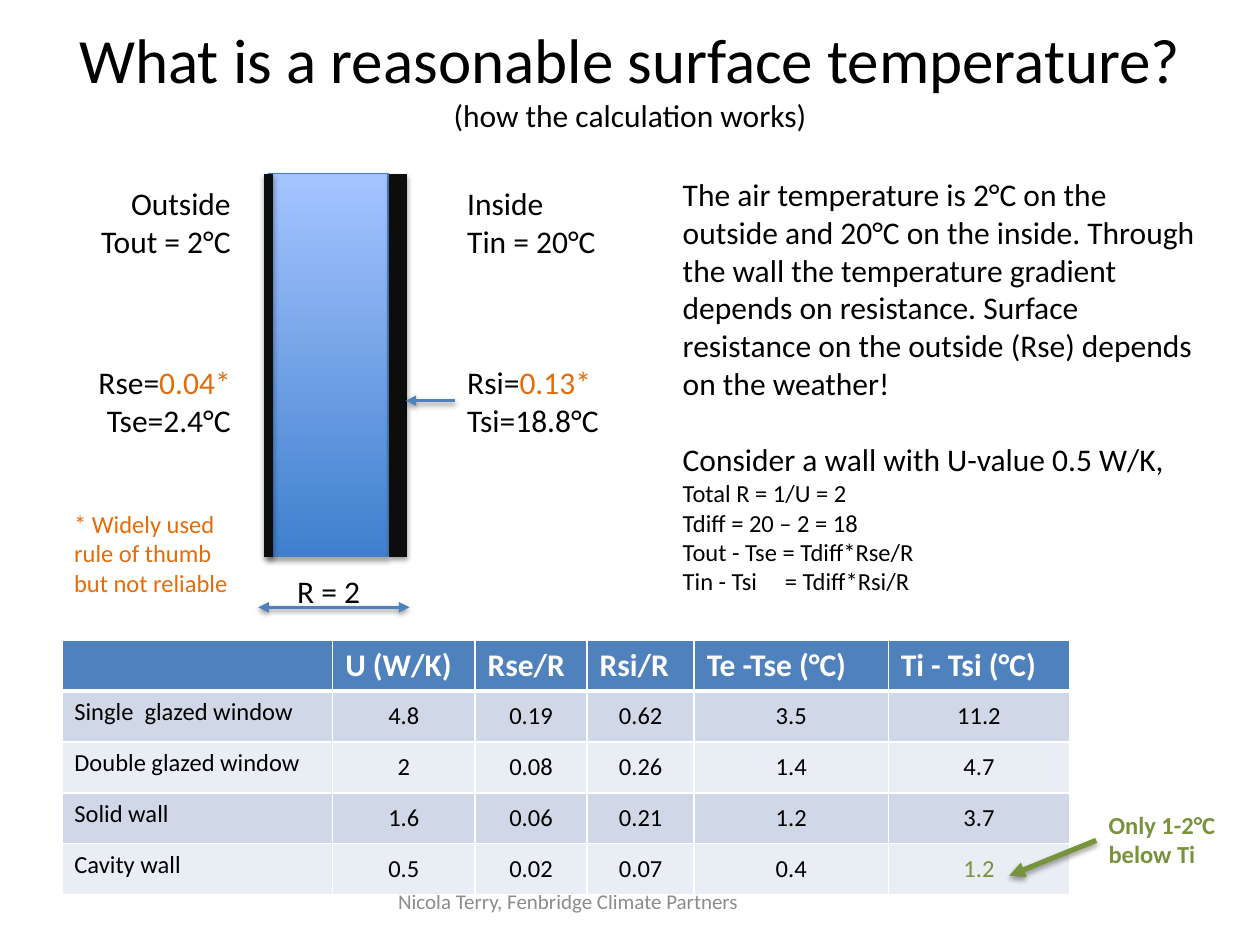
from dataclasses import dataclass

from lxml import etree
from pptx import Presentation
from pptx.dml.color import RGBColor
from pptx.enum.shapes import MSO_CONNECTOR, MSO_SHAPE
from pptx.enum.text import MSO_ANCHOR, MSO_AUTO_SIZE, PP_ALIGN
from pptx.oxml.ns import qn
from pptx.util import Inches, Pt

LEFT, CENTER, RIGHT = PP_ALIGN.LEFT, PP_ALIGN.CENTER, PP_ALIGN.RIGHT
TOP, MIDDLE = MSO_ANCHOR.TOP, MSO_ANCHOR.MIDDLE
FONT = "Calibri"
COLORS = {
    "black": "000000", "white": "FFFFFF", "gray": "8C8C8C", "surface": "0D0D0D",
    "orange": "E46C0A", "green": "77933C", "blue": "4F81BD", "outline": "4B7EBC",
    "wall_dark": "3F80CE", "wall_light": "A4C4FF",
    "band_dark": "D0D8E8", "band_light": "E9EDF4",
}


@dataclass
class Run:
    text: str
    size: float = 18
    color: str = "black"
    bold: bool = False


@dataclass
class Label:
    box: tuple
    paragraphs: list
    align: PP_ALIGN = LEFT
    anchor: MSO_ANCHOR = TOP


@dataclass
class Line:
    start: tuple
    end: tuple
    color: str
    width: float
    arrows: tuple = ()


def rgb(name: str) -> RGBColor:
    return RGBColor.from_string(COLORS[name])


def add_run(p, run: Run) -> None:
    r = p.add_run()
    r.text = run.text
    r.font.name, r.font.size, r.font.bold = FONT, Pt(run.size), run.bold
    r.font.color.rgb = rgb(run.color)


def fill_text(tf, paragraphs: list, align: PP_ALIGN) -> None:
    for i, runs in enumerate(paragraphs):
        p = tf.paragraphs[0] if i == 0 else tf.add_paragraph()
        p.alignment = align
        for run in runs:
            if run is None:
                p.add_line_break()
            else:
                add_run(p, run)


def add_label(s, label: Label):
    sp = s.shapes.add_textbox(*map(Inches, label.box))
    tf = sp.text_frame
    tf.word_wrap = True
    tf.auto_size = MSO_AUTO_SIZE.NONE if label.anchor == MIDDLE else MSO_AUTO_SIZE.SHAPE_TO_FIT_TEXT
    tf.vertical_anchor = label.anchor
    fill_text(tf, label.paragraphs, label.align)
    return tf


def add_shadow(sp, alpha: int, distance: float) -> None:
    effects = etree.SubElement(sp._element.spPr, qn("a:effectLst"))
    shadow = etree.SubElement(effects, qn("a:outerShdw"), blurRad=str(Pt(3.1)),
                              dist=str(Pt(distance)), dir="5400000", rotWithShape="0")
    color = etree.SubElement(shadow, qn("a:srgbClr"), val=COLORS["black"])
    etree.SubElement(color, qn("a:alpha"), val=str(alpha * 1000))


def add_line(s, line: Line) -> None:
    sp = s.shapes.add_connector(MSO_CONNECTOR.STRAIGHT, *map(Inches, line.start + line.end))
    sp.line.color.rgb = rgb(line.color)
    sp.line.width = Pt(line.width)
    for end in line.arrows:
        etree.SubElement(sp.line._get_or_add_ln(), qn(f"a:{end}"), type="triangle")
    add_shadow(sp, 38, 1.6)


def add_wall(s) -> None:
    sp = s.shapes.add_shape(MSO_SHAPE.RECTANGLE, *map(Inches, (2.13, 1.38, 0.95, 3.04)))
    sp.fill.gradient()
    sp.fill.gradient_angle = 90
    for stop, position, color in zip(sp.fill.gradient_stops, (0, 1), ("wall_dark", "wall_light")):
        stop.position = position
        stop.color.rgb = rgb(color)
    sp.line.color.rgb = rgb("outline")
    sp.line.width = Pt(0.75)
    add_shadow(sp, 35, 1.8)


def set_borders(cell, bottom: float) -> None:
    tc_pr = cell._tc.get_or_add_tcPr()
    for i, (side, width) in enumerate(zip("LRTB", (1, 1, 1, bottom))):
        ln = etree.Element(qn(f"a:ln{side}"), w=str(Pt(width)))
        solid = etree.SubElement(ln, qn("a:solidFill"))
        etree.SubElement(solid, qn("a:srgbClr"), val=COLORS["white"])
        tc_pr.insert(i, ln)


def add_results(s, rows: list, widths: list) -> None:
    row_height = Inches(2.02 / len(rows))
    frame = s.shapes.add_table(len(rows), len(widths), Inches(0.49), Inches(5.08),
                               Inches(sum(widths)), row_height * len(rows))
    table = frame.table
    for col, width in zip(table.columns, widths):
        col.width = Inches(width)
    for r, values in enumerate(rows):
        table.rows[r].height = row_height
        header = r == 0
        for c, value in enumerate(values):
            cell = table.cell(r, c)
            cell.fill.solid()
            cell.fill.fore_color.rgb = rgb("blue" if header else ("band_light", "band_dark")[r % 2])
            set_borders(cell, 3 if header else 1)
            numeric = not header and c > 0
            if numeric:
                cell.vertical_anchor = MIDDLE
                cell.margin_left = cell.margin_right = cell.margin_top = cell.margin_bottom = 0
            last = r == len(rows) - 1 and c == len(values) - 1
            run = Run(value, 18, "white", True) if header else Run(value, 14, "green" if last else "black")
            fill_text(cell.text_frame, [[run]] if value else [], CENTER if numeric else LEFT)


def main() -> None:
    prs = Presentation()
    prs.slide_width, prs.slide_height = Inches(10), Inches(7.5)
    s = prs.slides.add_slide(prs.slide_layouts[5])

    title = s.shapes.title
    title.left, title.top, title.width, title.height = map(Inches, (0.5, 0.3, 9, 0.63))
    title.text_frame.auto_size = MSO_AUTO_SIZE.NONE
    title.text_frame.vertical_anchor = MIDDLE
    fill_text(title.text_frame, [[Run("What is a reasonable surface temperature?", 36), None,
                                  Run("(how the calculation works)")]], CENTER)

    add_wall(s)
    for line in (
        Line((3.16, 1.38), (3.16, 4.42), "surface", 10),
        Line((2.13, 1.38), (2.13, 4.42), "surface", 5),
        Line((3.61, 3.18), (3.22, 3.18), "blue", 2, ("tailEnd",)),
        Line((2.05, 4.82), (3.25, 4.82), "blue", 2, ("headEnd", "tailEnd")),
    ):
        add_line(s, line)

    for label in (
        Label((2.44, 6.95, 4.14, 0.4), [[Run("Nicola Terry, Fenbridge Climate Partners", 12, "gray")]],
              CENTER, MIDDLE),
        Label((3.61, 1.41, 1.26, 0.71), [[Run("Inside")], [Run("Tin = 20°C")]]),
        Label((0.67, 1.41, 1.26, 0.71), [[Run("Outside")], [Run("Tout = 2°C")]], RIGHT),
        Label((3.61, 2.83, 1.76, 0.71), [[Run("Rsi="), Run("0.13*", color="orange")], [Run("Tsi=18.8°C")]]),
        Label((0.67, 2.83, 1.26, 0.71), [[Run("Rse="), Run("0.04*", color="orange")], [Run("Tse=2.4°C")]], RIGHT),
        Label((2.26, 4.49, 0.95, 0.4), [[Run("R = 2")]]),
        Label((8.7, 6.38, 1.3, 0.57), [[Run("Only 1-2°C below Ti", 14, "green", True)]]),
        Label((0.49, 3.99, 1.44, 0.81), [[Run("* Widely used rule of thumb but not reliable", 14, "orange")]]),
    ):
        add_label(s, label)

    explanation = add_label(s, Label((5.32, 1.34, 4.31, 3.47), [
        [Run("The air temperature is 2°C on the outside and 20°C on the inside. Through the wall "
             "the temperature gradient depends on resistance. Surface resistance on the outside "
             "(Rse) depends on the weather!")],
        [Run("Consider a wall with U-value 0.5 W/K,"), None, Run("Total R = 1/U = 2", 14)],
        [Run("Tdiff = 20 – 2 = 18", 14)],
        [Run("Tout - Tse = Tdiff*Rse/R", 14)],
        [Run("Tin - Tsi\t= Tdiff*Rsi/R", 14)],
    ]))
    explanation.paragraphs[1].space_before = Pt(22)
    tabs = etree.SubElement(explanation.paragraphs[-1]._p.get_or_add_pPr(), qn("a:tabLst"))
    etree.SubElement(tabs, qn("a:tab"), pos=str(Inches(0.81)), algn="l")

    add_results(s, [
        ["", "U (W/K)", "Rse/R", "Rsi/R", "Te -Tse (°C)", "Ti - Tsi (°C)"],
        ["Single  glazed window", "4.8", "0.19", "0.62", "3.5", "11.2"],
        ["Double glazed window", "2", "0.08", "0.26", "1.4", "4.7"],
        ["Solid wall", "1.6", "0.06", "0.21", "1.2", "3.7"],
        ["Cavity wall", "0.5", "0.02", "0.07", "0.4", "1.2"],
    ], [2.15, 1.13, 0.89, 0.85, 1.54, 1.44])
    add_line(s, Line((8.7, 6.67), (8.01, 6.95), "green", 3, ("tailEnd",)))

    prs.save("out.pptx")


if __name__ == "__main__":
    main()
